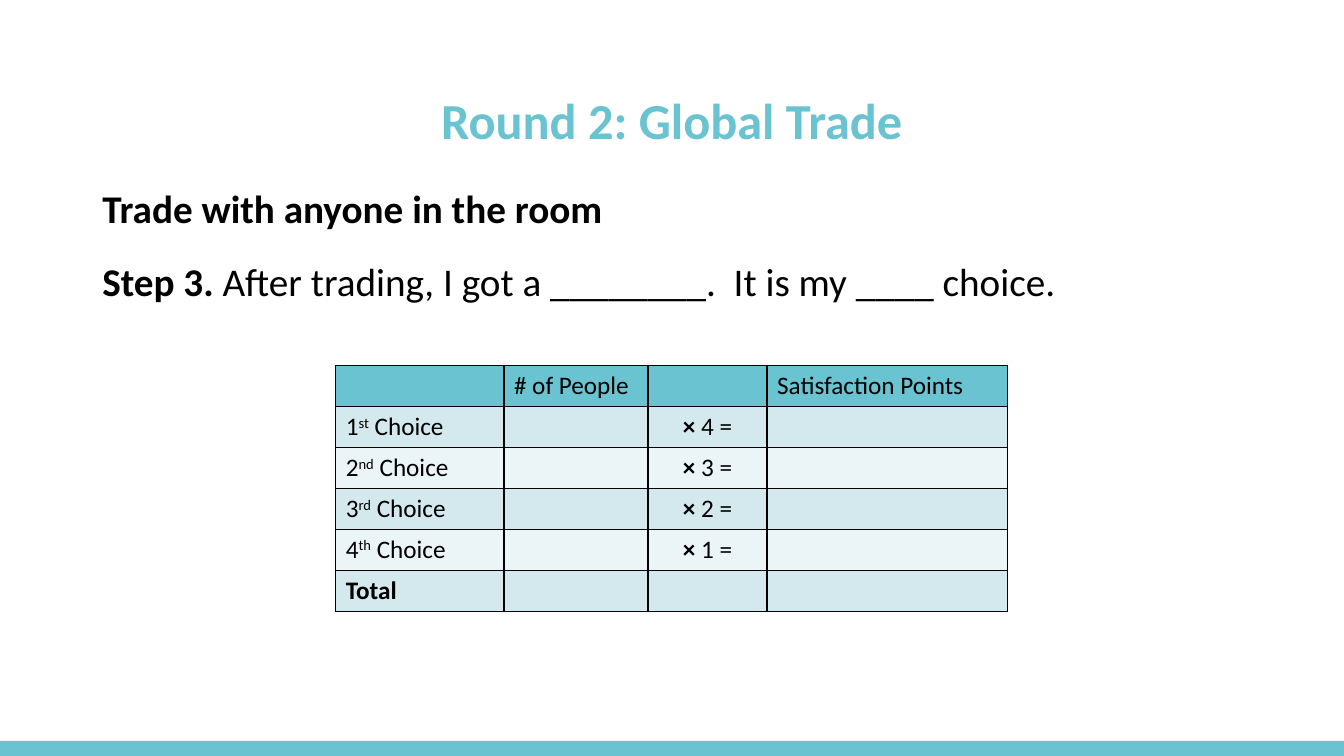
from dataclasses import dataclass
from typing import NamedTuple

from lxml.etree import SubElement
from pptx import Presentation
from pptx.dml.color import RGBColor
from pptx.enum.shapes import MSO_SHAPE
from pptx.enum.text import MSO_ANCHOR, PP_ALIGN
from pptx.oxml.ns import qn
from pptx.util import Cm, Pt


@dataclass(frozen=True)
class Theme:
    font: str = "Calibri"
    accent: str = "69C3D1"
    ink: str = "000000"
    bands: tuple[str, str] = ("D4E9EE", "EBF5F7")
    title: int = 36
    body: int = 28
    table: int = 18
    border: int = 1


class Run(NamedTuple):
    text: str
    bold: bool = False
    raised: bool = False


class Para(NamedTuple):
    runs: tuple[Run, ...] = ()
    align: PP_ALIGN = PP_ALIGN.LEFT
    spacing: float = 1.0
    before: int = 0
    after: int = 0


class Box(NamedTuple):
    left: float
    top: float
    width: float
    height: float
    size: int
    color: str
    anchor: MSO_ANCHOR
    paras: tuple[Para, ...]


T = Theme()
WIDTH, HEIGHT, BAR = 33.87, 19.05, 0.38
LEFT, TEXT_WIDTH = 2.33, 29.21
COLUMNS = (4.24, 3.63, 3.0, 6.07)
ROW = 1.03

BOXES = (
    Box(LEFT, 2.26, TEXT_WIDTH, 1.68, T.title, T.accent, MSO_ANCHOR.MIDDLE, (
        Para((Run("Round 2: Global Trade", True),), PP_ALIGN.CENTER, 0.9),
    )),
    Box(LEFT, 4.65, TEXT_WIDTH, 12.09, T.body, T.ink, MSO_ANCHOR.TOP, (
        Para((Run("Trade with anyone in the room", True),), spacing=0.9, after=12),
        Para((Run("Step 3.", True),
              Run(" After trading, I got a ________.  It is my ____ choice.")),
             spacing=0.9, before=10),
    )),
)


def choice_row(rank: int, suffix: str) -> tuple[Para, ...]:
    label = Para((Run(str(rank)), Run(suffix, raised=True), Run(" Choice")))
    factor = Para((Run("×", True), Run(f" {5 - rank} =")), PP_ALIGN.CENTER)
    return label, Para(), factor, Para()


ROWS = (
    (Para(), Para((Run("# of People"),)), Para(), Para((Run("Satisfaction Points"),))),
    *(choice_row(i, suffix) for i, suffix in enumerate(("st", "nd", "rd", "th"), 1)),
    (Para((Run("Total", True),)), Para(), Para(), Para()),
)


def write_para(p, para: Para, size: int, color: str) -> None:
    p.alignment = para.align
    p.line_spacing = para.spacing
    p.space_before, p.space_after = Pt(para.before), Pt(para.after)
    for run in para.runs:
        r = p.add_run()
        r.text = run.text
        r.font.name, r.font.size, r.font.bold = T.font, Pt(size), run.bold
        r.font.color.rgb = RGBColor.from_string(color)
        if run.raised:
            r.font._element.set("baseline", "30000")


def add_box(s, box: Box) -> None:
    sp = s.shapes.add_textbox(Cm(box.left), Cm(box.top), Cm(box.width), Cm(box.height))
    tf = sp.text_frame
    tf.word_wrap = True
    tf.vertical_anchor = box.anchor
    for i, para in enumerate(box.paras):
        p = tf.add_paragraph() if i else tf.paragraphs[0]
        write_para(p, para, box.size, box.color)


def add_borders(cell) -> None:
    tc_pr = cell._tc.get_or_add_tcPr()
    for side in ("lnL", "lnR", "lnT", "lnB"):
        ln = SubElement(tc_pr, qn(f"a:{side}"), w=str(Pt(T.border)))
        fill = SubElement(ln, qn("a:solidFill"))
        SubElement(fill, qn("a:srgbClr"), val=T.ink)


def add_score_table(s) -> None:
    frame = s.shapes.add_table(len(ROWS), len(COLUMNS), Cm(8.46), Cm(9.22),
                               Cm(sum(COLUMNS)), Cm(ROW * len(ROWS)))
    table = frame.table
    for column, width in zip(table.columns, COLUMNS):
        column.width = Cm(width)
    for i, paras in enumerate(ROWS):
        table.rows[i].height = Cm(ROW)
        color = T.bands[(i - 1) % 2] if i else T.accent
        for j, para in enumerate(paras):
            cell = table.cell(i, j)
            add_borders(cell)
            cell.fill.solid()
            cell.fill.fore_color.rgb = RGBColor.from_string(color)
            write_para(cell.text_frame.paragraphs[0], para, T.table, T.ink)


def add_bar(s) -> None:
    sp = s.shapes.add_shape(MSO_SHAPE.RECTANGLE, Cm(0), Cm(HEIGHT - BAR),
                            Cm(WIDTH), Cm(BAR))
    sp.shadow.inherit = False
    sp.fill.solid()
    sp.fill.fore_color.rgb = RGBColor.from_string(T.accent)
    sp.line.fill.background()


def main() -> None:
    prs = Presentation()
    prs.slide_width, prs.slide_height = Cm(WIDTH), Cm(HEIGHT)
    s = prs.slides.add_slide(prs.slide_layouts[6])
    add_bar(s)
    for box in BOXES:
        add_box(s, box)
    add_score_table(s)
    prs.save("out.pptx")


if __name__ == "__main__":
    main()
